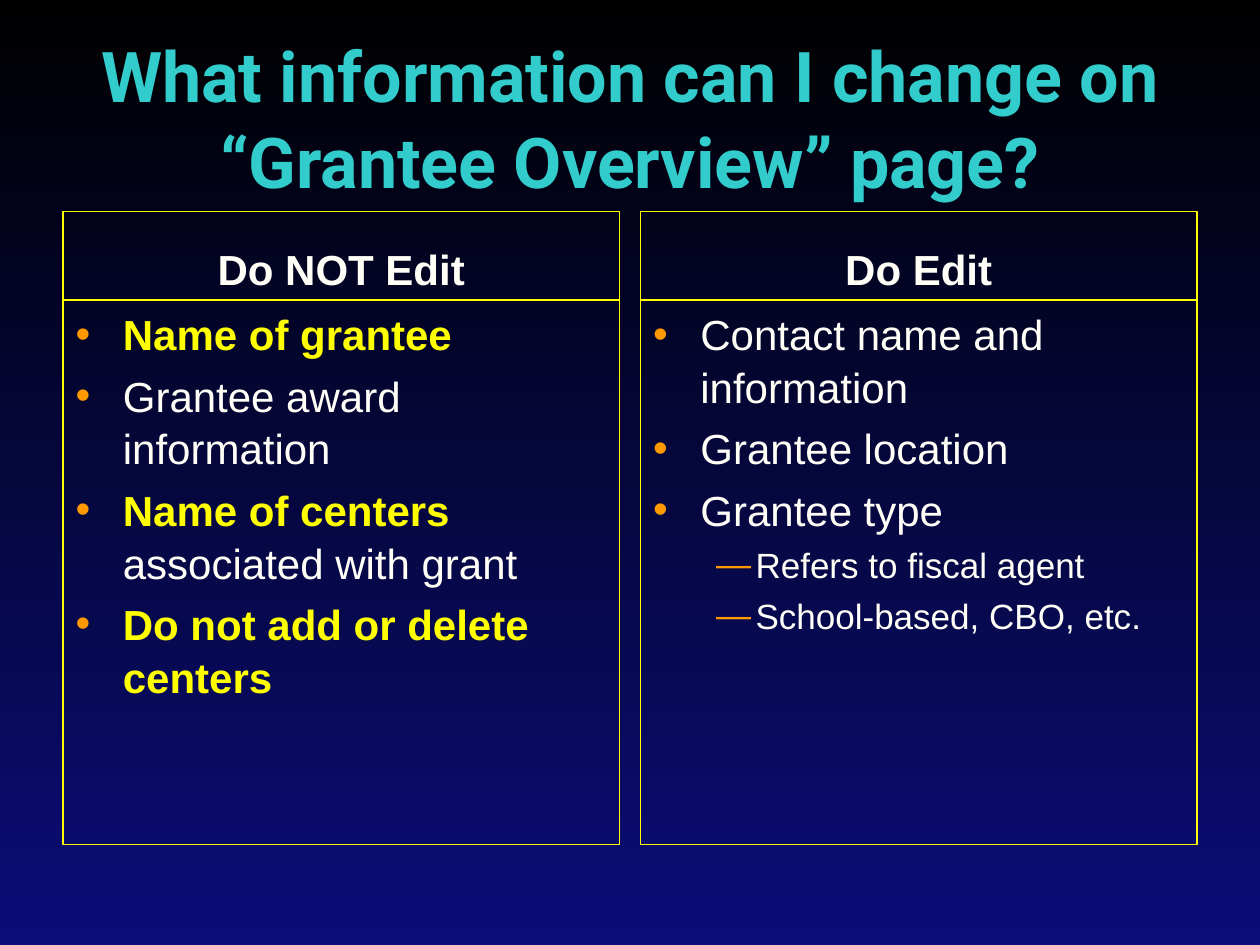
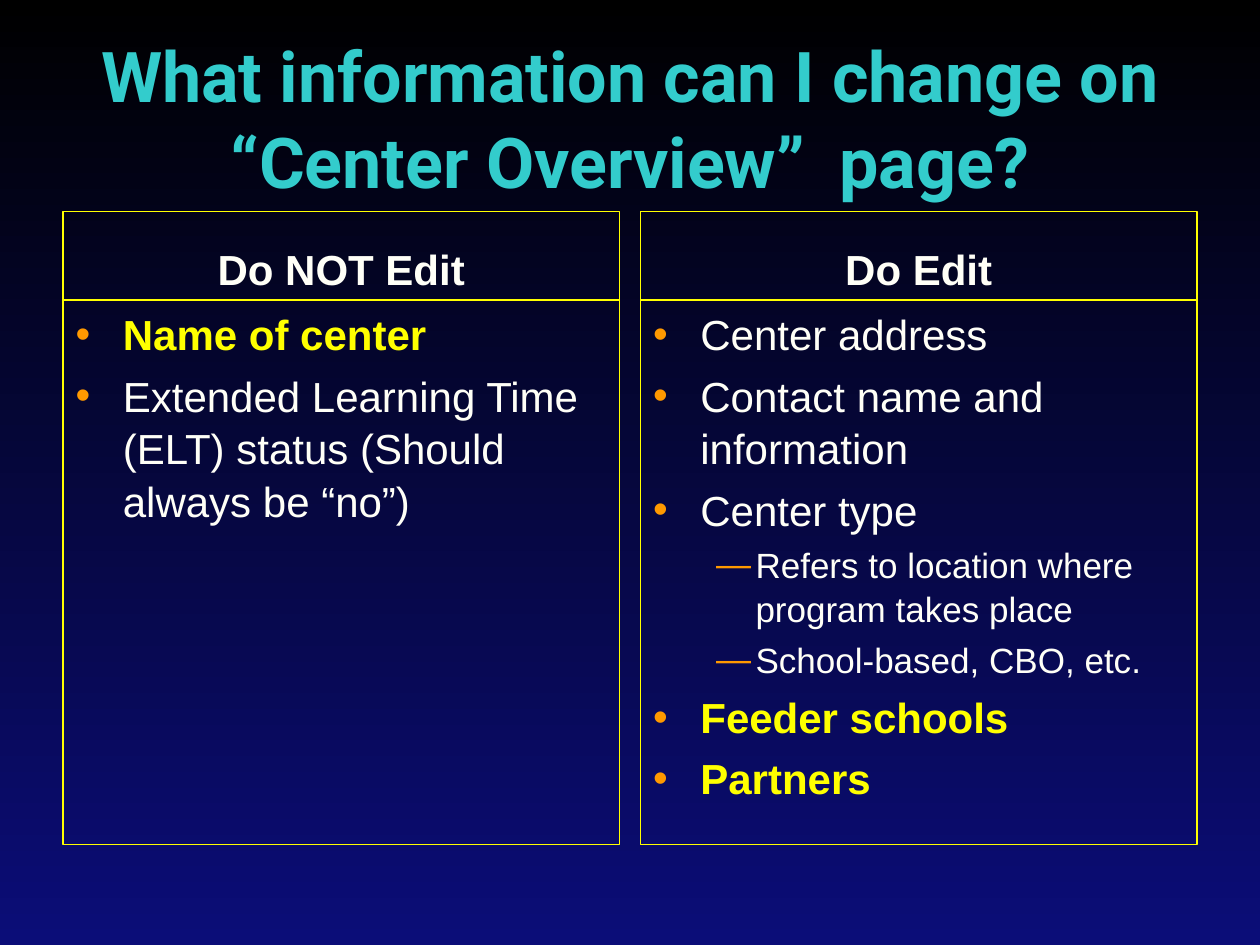
from lxml import etree
from pptx import Presentation
from pptx.dml.color import RGBColor
from pptx.enum.text import MSO_ANCHOR, MSO_AUTO_SIZE, PP_ALIGN
from pptx.oxml.ns import qn
from pptx.util import Pt

CENTER, LEFT = PP_ALIGN.CENTER, PP_ALIGN.LEFT
TOP, MIDDLE, BOTTOM = MSO_ANCHOR.TOP, MSO_ANCHOR.MIDDLE, MSO_ANCHOR.BOTTOM
NO_AUTOFIT = MSO_AUTO_SIZE.NONE

COLORS = {
    "sky": "000000",
    "ground": "0B0D78",
    "title": "33CCCC",
    "text": "FFFFF7",
    "key": "FFFF00",
    "border": "FFFF00",
    "bullet": "FF9900",
}
COMPARISON_LAYOUT = 4
COLUMN_LEFTS = (36, 366)
COLUMN_WIDTH = 318
HEADING_TOP, LIST_TOP, LIST_BOTTOM = 121, 171.4, 482.4
# By list level: bullet, text size, left margin, hanging indent
LEVELS = (("•", 24, 27, 27), ("—", 20, 58.5, 22.5))

# Each list item is (level, [(text, is key point), ...])
PAGES = [
    ("What information can I change on “Grantee Overview” page?", [
        ("Do NOT Edit", [
            (0, [("Name of grantee", True)]),
            (0, [("Grantee award information", False)]),
            (0, [("Name of centers ", True), ("associated with grant", False)]),
            (0, [("Do not add or delete centers", True)]),
        ]),
        ("Do Edit", [
            (0, [("Contact name and information", False)]),
            (0, [("Grantee location", False)]),
            (0, [("Grantee type", False)]),
            (1, [("Refers to fiscal agent", False)]),
            (1, [("School-based, CBO, etc.", False)]),
        ]),
    ]),
    ("What information can I change on “Center Overview”  page?", [
        ("Do NOT Edit", [
            (0, [("Name of center", True)]),
            (0, [("Extended Learning Time (ELT) status (Should always be “no”)", False)]),
        ]),
        ("Do Edit", [
            (0, [("Center address", False)]),
            (0, [("Contact name and information", False)]),
            (0, [("Center type", False)]),
            (1, [("Refers to location where program takes place", False)]),
            (1, [("School-based, CBO, etc.", False)]),
            (0, [("Feeder schools", True)]),
            (0, [("Partners", True)]),
        ]),
    ]),
]


def place(box, left, top, width, height, anchor, bordered=True):
    """Position a placeholder, set its anchor and return its text frame."""
    box.left, box.top, box.width, box.height = map(Pt, (left, top, width, height))
    if bordered:
        box.line.color.rgb = RGBColor.from_string(COLORS["border"])
        box.line.width = Pt(0.75)
    frame = box.text_frame
    frame.word_wrap = True
    frame.auto_size = NO_AUTOFIT
    frame.vertical_anchor = anchor
    return frame


def add_span(para, text, size, color, bold, font="Arial"):
    span = para.add_run()
    span.text = text
    span.font.name = font
    span.font.size = Pt(size)
    span.font.bold = bold
    span.font.color.rgb = RGBColor.from_string(COLORS[color])


deck = Presentation()
deck.slide_width, deck.slide_height = Pt(720), Pt(540)

backdrop = deck.slide_master.background.fill
backdrop.gradient()
backdrop.gradient_angle = 270
for stop, position, color in zip(backdrop.gradient_stops, (0, 1), ("sky", "ground")):
    stop.position = position
    stop.color.rgb = RGBColor.from_string(COLORS[color])

for title, columns in PAGES:
    page = deck.slides.add_slide(deck.slide_layouts[COMPARISON_LAYOUT])
    para = place(page.shapes.title, 36, 21.6, 648, 90, MIDDLE, bordered=False).paragraphs[0]
    para.alignment = CENTER
    para.line_spacing = 1.02
    add_span(para, title, 40, "title", True, "Roboto")

    _, *boxes = page.placeholders
    for left, heading_box, list_box, (heading, items) in zip(
            COLUMN_LEFTS, boxes[::2], boxes[1::2], columns):
        para = place(heading_box, left, HEADING_TOP, COLUMN_WIDTH,
                     LIST_TOP - HEADING_TOP, BOTTOM).paragraphs[0]
        para.alignment = CENTER
        para.space_before = Pt(0)
        add_span(para, heading, 24, "text", True)

        frame = place(list_box, left, LIST_TOP, COLUMN_WIDTH, LIST_BOTTOM - LIST_TOP, TOP)
        for number, (level, spans) in enumerate(items):
            bullet, size, margin, hanging = LEVELS[level]
            para = frame.add_paragraph() if number else frame.paragraphs[0]
            para.level = level
            para.alignment = LEFT
            properties = para._p.get_or_add_pPr()
            properties.set("marL", str(Pt(margin)))
            properties.set("indent", str(-Pt(hanging)))
            bullet_color = etree.SubElement(properties, qn("a:buClr"))
            etree.SubElement(bullet_color, qn("a:srgbClr"), val=COLORS["bullet"])
            etree.SubElement(properties, qn("a:buChar"), char=bullet)
            para.line_spacing = 1.05
            para.space_before = Pt(size * 0.2 if number else 0)
            for text, is_key in spans:
                add_span(para, text, size, "key" if is_key else "text", is_key)

deck.save("out.pptx")
